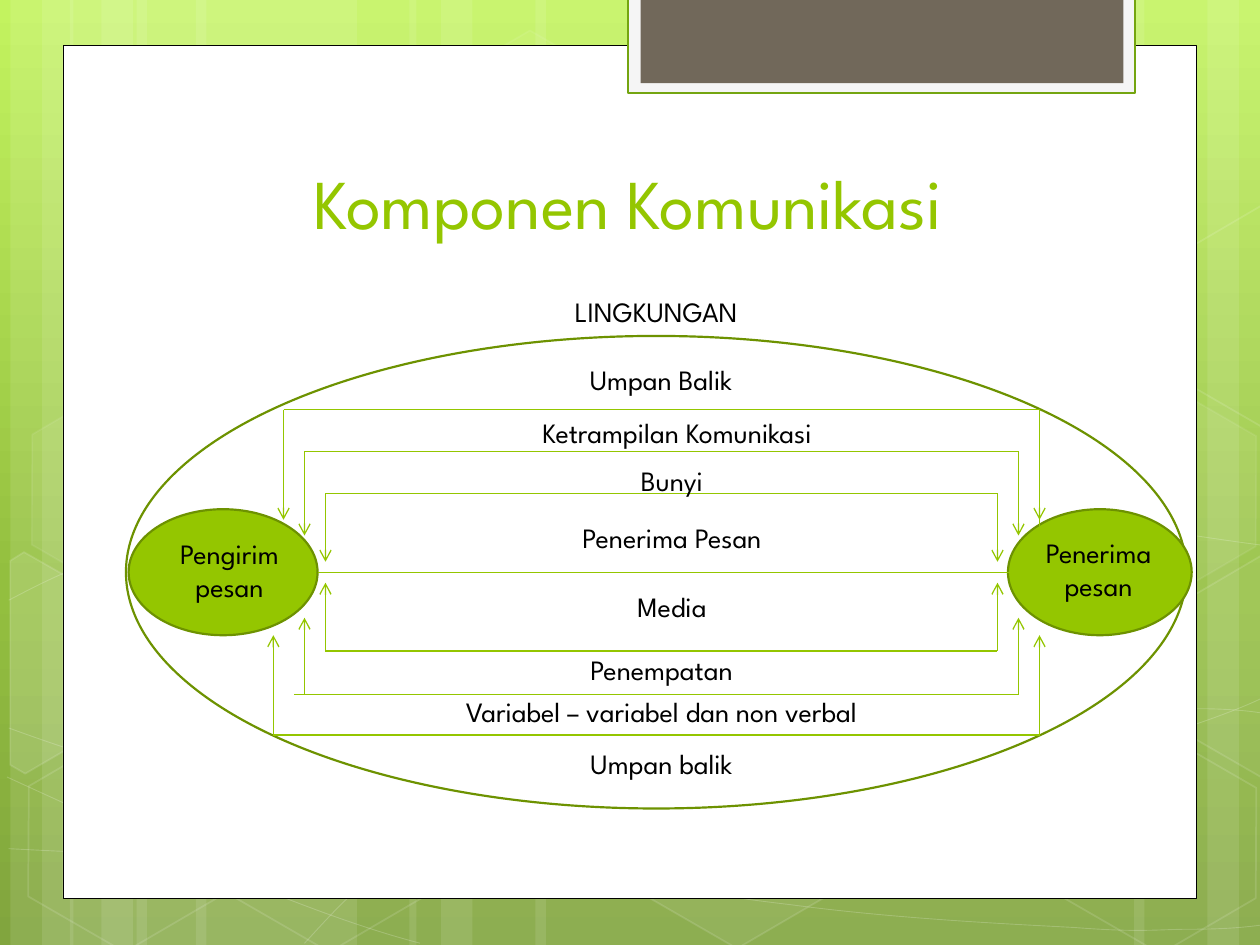
from copy import deepcopy
from math import cos, radians, sin

from pptx import Presentation
from pptx.dml.color import RGBColor
from pptx.enum.shapes import MSO_CONNECTOR, MSO_SHAPE
from pptx.enum.text import MSO_ANCHOR, PP_ALIGN
from pptx.oxml.ns import qn
from pptx.oxml.xmlchemy import OxmlElement
from pptx.util import Pt

FONT = "League Spartan"
HEX = {"white": "FFFFFF", "black": "000000", "green": "94C600", "dark": "6D9200",
       "frame": "74A510", "pale": "F5F5F5", "brown": "71685A",
       "top": "C3F35F", "mid": "93BF3F", "base": "81A53E"}

STRIPES = [(78, 126), (6, 36), (24, 60), (112, 126), (40, 36), (58, 60), (528, 126),
           (690, 36), (648, 60), (306, 222), (234, 36), (252, 60)]
# Each curve is a start point followed by groups of three Bezier points.
CURVES = [
    [(5, 485), (44, 487), (83, 489), (137, 488), (191, 487), (258, 486), (330, 479),
     (402, 472), (504, 458), (570, 444), (636, 431), (703, 409), (725, 397)],
    [(5, 343), (26, 332), (47, 321), (87, 310), (128, 300), (186, 284), (250, 279),
     (314, 274), (392, 273), (471, 279), (550, 284), (682, 307), (725, 312)],
    [(4, 444), (91, 484), (178, 523), (240, 539)],
    [(5, 416), (27, 424), (50, 432), (92, 444), (134, 454), (197, 472), (257, 485),
     (317, 497), (392, 510), (452, 517), (512, 525), (576, 528), (614, 530),
     (652, 533), (662, 531), (680, 531), (699, 531), (712, 530), (725, 528)],
    [(174, 539), (187, 525), (200, 510), (217, 498), (235, 485), (259, 470), (279, 460),
     (300, 450), (312, 446), (338, 438), (364, 431), (413, 421), (438, 416),
     (464, 411), (467, 411), (490, 410), (512, 408), (547, 405), (572, 405),
     (597, 404), (638, 405), (638, 405), (654, 405), (670, 405), (686, 405),
     (699, 405), (711, 406), (718, 407), (724, 408), (722, 407), (724, 408)],
]
# Left, top, fill opacity, line opacity
CELLS = [(240, 26, 4, 8), (358, 424, 6, 12), (8, 426, 0, 12), (10, 225, 7, 8),
         (125, 426, 0, 12), (542, 326, 10, 12), (600, 427, 0, 12), (600, 226, 7, 8)]
# Cut hexagons: centre, outline as it stands on the slide, fill opacity
EDGES = [((25.9, 385.2), [(5.8, 320.4), (13.7, 315.4), (69.1, 347), (68.4, 410.4),
                          (14.4, 442), (5.8, 437)], 10),
         ((709.2, 374.4), [(666.7, 349.2), (720.7, 317.5), (726.5, 321.1),
                           (726.5, 441.4), (721.4, 444.2), (666.7, 412.6)], 4),
         ((709.2, 173.5), [(666.7, 149), (720.7, 117.4), (727.2, 121),
                           (726.5, 241.2), (721.4, 244.1), (666.7, 212.4)], 0)]

# Left, right, bar and arrow tip, relative to the outer ellipse
LOOPS = [(114, 498, 90, 129), (114, 498, 180, 141), (90, 522, 42, 105),
         (102, 510, 66, 114), (84.2, 522, 228, 171), (102, 510, 205, 161)]
# Text, left, top, width, relative to the outer ellipse
LABELS = [("Pengirim pesan", 9.2, 110.8, 100), ("Penerima pesan", 505.8, 110.2, 100),
          ("LINGKUNGAN", 240, -27, 126), ("Umpan Balik", 242.8, 11.4, 126),
          ("Ketrampilan Komunikasi", 213, 42, 204), ("Bunyi", 210, 69.5, 204),
          ("Penerima Pesan", 210, 102, 204), ("Media", 210, 141.5, 204),
          ("Penempatan", 204, 177.5, 204),
          ("Variabel – variabel dan non verbal", 102, 201.5, 408),
          ("Umpan balik", 204, 231.2, 204)]


def color(name):
    return RGBColor.from_string(HEX[name])


def fade(node, share):
    """Set the opacity, in percent, of a solid fill held by node."""
    alpha = OxmlElement("a:alpha")
    alpha.set("val", str(share * 1000))
    node.find(qn("a:solidFill")).find(qn("a:srgbClr")).append(alpha)


def paint(shape, fill=None, line=None, width=1, clear=100, faint=100):
    """Style a shape; clear and faint are the opacities of fill and line."""
    shape.shadow.inherit = False
    props = shape._element.spPr
    if fill and clear:
        shape.fill.solid()
        shape.fill.fore_color.rgb = color(fill)
        if clear < 100:
            fade(props, clear)
    else:
        shape.fill.background()
    if line:
        shape.line.color.rgb = color(line)
        shape.line.width = Pt(width)
        if faint < 100:
            fade(props.find(qn("a:ln")), faint)
    else:
        shape.line.fill.background()


def block(slide, kind, x, y, w, h, **style):
    shape = slide.shapes.add_shape(kind, Pt(x), Pt(y), Pt(w), Pt(h))
    paint(shape, **style)
    return shape


def trace(slide, points, close, **style):
    pen = slide.shapes.build_freeform(Pt(points[0][0]), Pt(points[0][1]))
    pen.add_line_segments([(Pt(x), Pt(y)) for x, y in points[1:]], close=close)
    shape = pen.convert_to_shape()
    paint(shape, **style)
    return shape


def bend(shape):
    """Turn each three line segments of a freeform into one Bezier curve."""
    lines = list(shape._element.iter(qn("a:lnTo")))
    for i in range(0, len(lines), 3):
        curve = OxmlElement("a:cubicBezTo")
        lines[i].addprevious(curve)
        for line in lines[i:i + 3]:
            curve.append(line[0])
            line.getparent().remove(line)


def turn(point, mid, angle):
    dx, dy, a = point[0] - mid[0], point[1] - mid[1], radians(angle)
    return (mid[0] + dx * cos(a) - dy * sin(a), mid[1] + dx * sin(a) + dy * cos(a))


def label(slide, text, x, y, w, h, size=16, tint="black", anchor=MSO_ANCHOR.TOP):
    frame = slide.shapes.add_textbox(Pt(x), Pt(y), Pt(w), Pt(h)).text_frame
    frame.word_wrap = True
    frame.vertical_anchor = anchor
    frame.text = text
    para = frame.paragraphs[0]
    para.alignment = PP_ALIGN.CENTER
    font = para.runs[0].font
    font.name, font.size = FONT, Pt(size)
    font.color.rgb = color(tint)


def link(slide, x1, y1, x2, y2, arrow=False):
    line = slide.shapes.add_connector(MSO_CONNECTOR.STRAIGHT,
                                      Pt(x1), Pt(y1), Pt(x2), Pt(y2))
    line.line.color.rgb = color("green")
    line.line.width = Pt(0.75)
    props = line._element.spPr
    if arrow:
        tail = OxmlElement("a:tailEnd")
        tail.set("type", "arrow")
        props.find(qn("a:ln")).append(tail)
    props.append(OxmlElement("a:effectLst"))


def backdrop(slide, h):
    fill = slide.background.fill
    fill.gradient()
    fill.gradient_angle = 270
    stops = slide._element.find(".//" + qn("a:gsLst"))
    stops.append(deepcopy(stops[-1]))
    for stop, name, place in zip(fill.gradient_stops, ("top", "mid", "base"), (0, 0.62, 1)):
        stop.color.rgb = color(name)
        stop.position = place
    for x, wide in STRIPES:
        block(slide, MSO_SHAPE.RECTANGLE, x, 0, wide, h, fill="white", clear=10)
    for knots in CURVES:
        bend(trace(slide, knots, False, line="white", width=0.5, faint=20))
    for x, y, clear, faint in CELLS:
        cell = block(slide, MSO_SHAPE.HEXAGON, x, y, 126, 109.5,
                     fill="white", line="white", clear=clear, faint=faint)
        cell.adjustments[0] = 0.285
        cell.rotation = 30
    for mid, points, clear in EDGES:
        flat = [turn(point, mid, -30) for point in points]
        trace(slide, flat, True, fill="white", line="white",
              clear=clear, faint=12).rotation = 30


def panel(slide, x, y, w, h):
    """Draw the white page with its tab and title."""
    block(slide, MSO_SHAPE.RECTANGLE, x, y, w, h, fill="white", line="black", width=0.5)
    block(slide, MSO_SHAPE.RECTANGLE, x + 323, y - 27.5, 289.6, 54.8,
          fill="pale", line="frame", width=1.25)
    block(slide, MSO_SHAPE.RECTANGLE, x + 330, y - 27.5, 276, 49, fill="brown")
    label(slide, "Komponen Komunikasi", x + 46.3, y + 54.6, 553, 62,
          size=40, tint="green", anchor=MSO_ANCHOR.BOTTOM)


def diagram(slide, x, y, w, h):
    rim = {"line": "dark", "width": 1.25}
    block(slide, MSO_SHAPE.OVAL, x, y, w, h, **rim)
    for left, wide in ((1.5, 108), (504, 105)):
        block(slide, MSO_SHAPE.OVAL, x + left, y + 99, wide, 72, fill="green", **rim)
    link(slide, x + 522, y + h / 2, x + 109.5, y + h / 2)
    for left, right, bar, tip in LOOPS:
        start = left - 6 if bar == 205 else left  # this bar overshoots its arrow
        link(slide, x + start, y + bar, x + right, y + bar)
        for side in (left, right):
            link(slide, x + side, y + bar, x + side, y + tip, arrow=True)
    link(slide, x + 522, y + 78, x + 522, y + 126, arrow=True)
    for text, left, top, wide in LABELS:
        label(slide, text, x + left, y + top, wide, 46 if wide == 100 else 26.6)


def main():
    deck = Presentation()
    deck.slide_width, deck.slide_height = Pt(720), Pt(540)
    slide = deck.slides.add_slide(deck.slide_layouts[6])
    backdrop(slide, 540)
    panel(slide, 36, 26, 648, 487.2)
    diagram(slide, 72, 192, 606, 270)
    deck.save("out.pptx")


if __name__ == "__main__":
    main()
